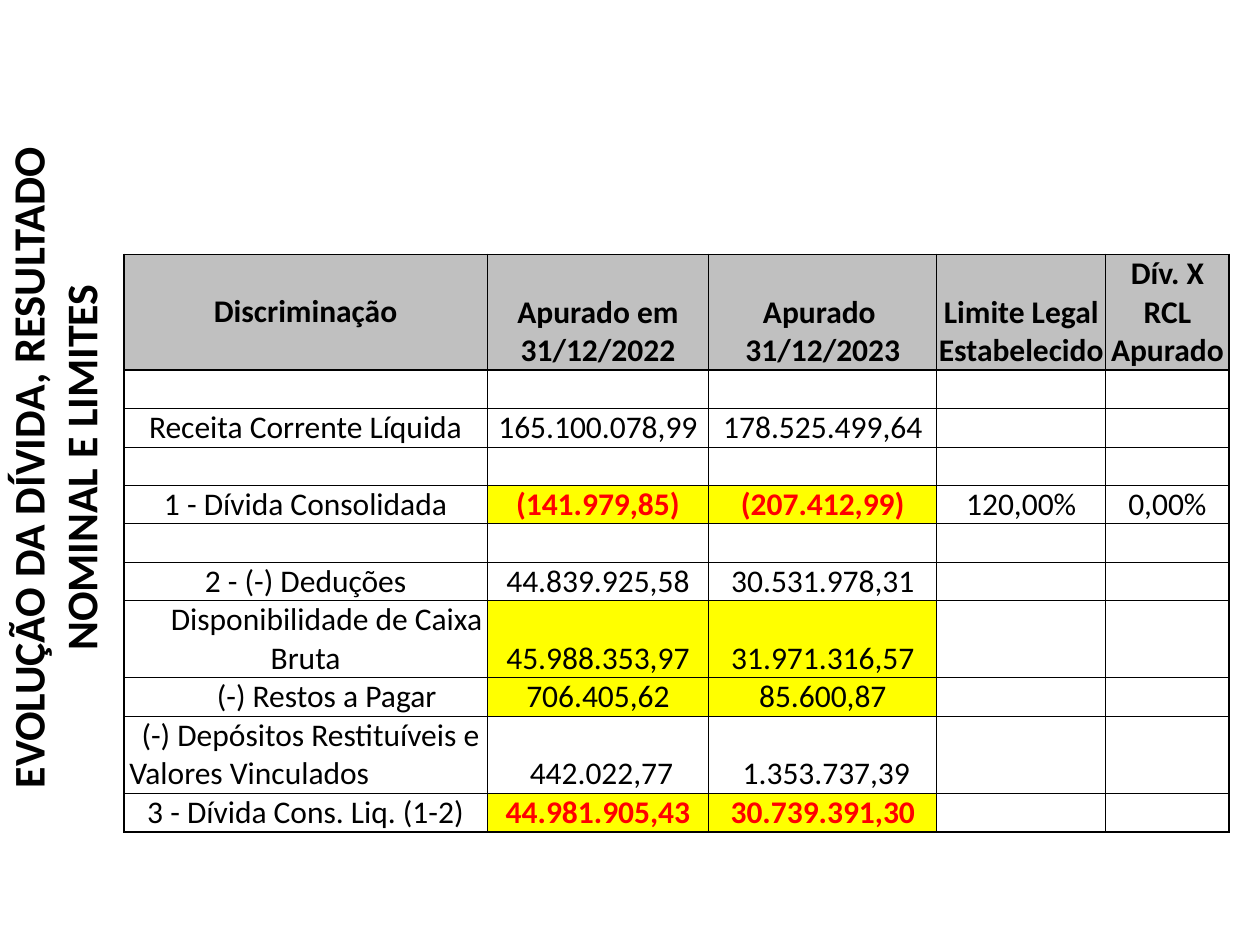
"""Build the slide on debt evolution, nominal result and limits."""
from dataclasses import dataclass

import lxml.etree
import pptx
import pptx.dml.color
import pptx.enum.text
import pptx.oxml
import pptx.oxml.ns
import pptx.util

Pt = pptx.util.Pt
Align = pptx.enum.text.PP_ALIGN
Anchor = pptx.enum.text.MSO_ANCHOR


@dataclass(frozen=True)
class Theme:
    """Colours, font, type sizes and line widths."""
    font: str = "Calibri"
    ink: str = "000000"
    alert: str = "FF0000"
    head: str = "C0C0C0"
    mark: str = "FFFF00"
    title: float = 25
    result: float = 25.5
    body: float = 18
    thin: float = 0.5
    thick: float = 1


@dataclass(frozen=True)
class Look:
    """Fill and type of a cell."""
    fill: str = ""
    color: str = Theme.ink
    bold: bool = False


@dataclass(frozen=True)
class Row:
    """One table row with its label, values and text offsets."""
    label: str = ""
    values: tuple[str, ...] = ()
    look: Look = Look()
    lines: int = 1
    indent: float = 0
    margin: float = 0
    align: Align = Align.CENTER
    shift: float = 0


THEME = Theme()
PLAIN = Look()
HEAD = Look(THEME.head, bold=True)
MARK = Look(THEME.mark)
ALERT = Look(THEME.mark, THEME.alert, True)
LINE = 22
WIDTHS = (207.5, 126.7, 130.3, 96.5, 70.5)
TITLE = (
    ("EVOLUÇÃO DA DÍVIDA, ", THEME.title),
    ("RESULTADO", THEME.result),
    (" NOMINAL E LIMITES", THEME.title),
)
ROWS = (
    Row("Discriminação", ("Apurado em\n31/12/2022", "Apurado \n31/12/2023",
        "Limite Legal\nEstabelecido", "Dív. X RCL\nApurado"), HEAD, 3),
    Row(),
    Row("Receita Corrente Líquida", ("165.100.078,99", "178.525.499,64")),
    Row(),
    Row("1 - Dívida Consolidada",
        ("(141.979,85)", "(207.412,99)", "120,00%", "0,00%"), ALERT),
    Row(),
    Row("2 - (-) Deduções", ("44.839.925,58", "30.531.978,31")),
    Row("Disponibilidade de Caixa Bruta",
        ("45.988.353,97", "31.971.316,57"), MARK, 2, indent=24),
    Row("(-) Restos a Pagar", ("706.405,62", "85.600,87"), MARK, indent=24),
    Row("(-) Depósitos Restituíveis e Valores Vinculados",
        ("442.022,77", "1.353.737,39"), lines=2, indent=7, margin=3,
        align=Align.LEFT, shift=4),
    Row("3 - Dívida Cons. Liq. (1-2)",
        ("44.981.905,43", "30.739.391,30"), ALERT),
)


def paint(font, size: float, color: str, bold: bool) -> None:
    """Set the type of a run."""
    font.name, font.size, font.bold = THEME.font, Pt(size), bold
    font.color.rgb = pptx.dml.color.RGBColor.from_string(color)


def border(cell, widths: dict[str, float]) -> None:
    """Draw the sides of a cell with the given widths."""
    space = pptx.oxml.ns.nsdecls("a")
    props = cell._tc.get_or_add_tcPr()
    for spot, (side, width) in enumerate(widths.items()):
        props.insert(spot, pptx.oxml.parse_xml(
            f'<a:ln{side} {space} w="{Pt(width)}"><a:solidFill>'
            f'<a:srgbClr val="{THEME.ink}"/></a:solidFill></a:ln{side}>'))


def write(cell, text: str, look: Look, align: Align,
          indent: float, margin: float) -> None:
    """Fill a cell and set its text."""
    cell.margin_left = cell.margin_right = Pt(0)
    cell.margin_top = cell.margin_bottom = Pt(0)
    cell.vertical_anchor = Anchor.BOTTOM
    if look.fill:
        cell.fill.solid()
        cell.fill.fore_color.rgb = pptx.dml.color.RGBColor.from_string(look.fill)
    else:
        cell.fill.background()
    cell.text_frame.text = text
    for para in cell.text_frame.paragraphs:
        para.alignment = align
        props = para._p.get_or_add_pPr()
        props.set("marL", str(Pt(margin)))
        props.set("indent", str(Pt(indent)))
        for run in para.runs:
            paint(run.font, THEME.body, look.color, look.bold)
        if not text:
            end = lxml.etree.SubElement(
                para._p, pptx.oxml.ns.qn("a:endParaRPr"))
            end.set("sz", str(int(THEME.body * 100)))


def heading(slide) -> None:
    """Turn the title upright along the left side."""
    box = slide.shapes.title
    wide, high, mid_x, mid_y = 459.3, 97.2, 45, 267.15
    box.left, box.top = Pt(mid_x - wide / 2), Pt(mid_y - high / 2)
    box.width, box.height = Pt(wide), Pt(high)
    box.rotation = 270
    frame = box.text_frame
    frame.word_wrap = True
    frame.auto_size = pptx.enum.text.MSO_AUTO_SIZE.NONE
    frame.vertical_anchor = Anchor.TOP
    para = frame.paragraphs[0]
    para.alignment = Align.CENTER
    for text, size in TITLE:
        run = para.add_run()
        run.text = text
        paint(run.font, size, THEME.ink, True)


def grid(slide) -> None:
    """Draw the debt table."""
    last, end = len(ROWS) - 1, len(WIDTHS) - 1
    table = slide.shapes.add_table(
        len(ROWS), len(WIDTHS), Pt(70.9), Pt(145.4), Pt(sum(WIDTHS)),
        Pt(LINE * sum(row.lines for row in ROWS))).table
    table.first_row = table.horz_banding = False
    for column, width in zip(table.columns, WIDTHS):
        column.width = Pt(width)
    for y, row in enumerate(ROWS):
        table.rows[y].height = Pt(LINE * row.lines)
        texts = (row.label, *row.values)
        for x in range(len(WIDTHS)):
            cell = table.cell(y, x)
            text = texts[x] if x < len(texts) else ""
            look = row.look if y == 0 or x in (1, 2) else PLAIN
            if x == 0:
                write(cell, text, look, row.align, row.indent, row.margin)
            else:
                write(cell, text, look, Align.CENTER, row.shift, 0)
            edges = {"L": x == 0, "R": x == end,
                     "T": y in (0, 1), "B": y in (0, last)}
            border(cell, {side: THEME.thick if edge else THEME.thin
                          for side, edge in edges.items()})
    table.cell(0, 0).vertical_anchor = Anchor.MIDDLE


def main() -> None:
    """Build and save the deck."""
    deck = pptx.Presentation()
    deck.slide_width, deck.slide_height = Pt(720), Pt(540)
    slide = deck.slides.add_slide(deck.slide_layouts[5])
    heading(slide)
    grid(slide)
    deck.save("out.pptx")


if __name__ == "__main__":
    main()
